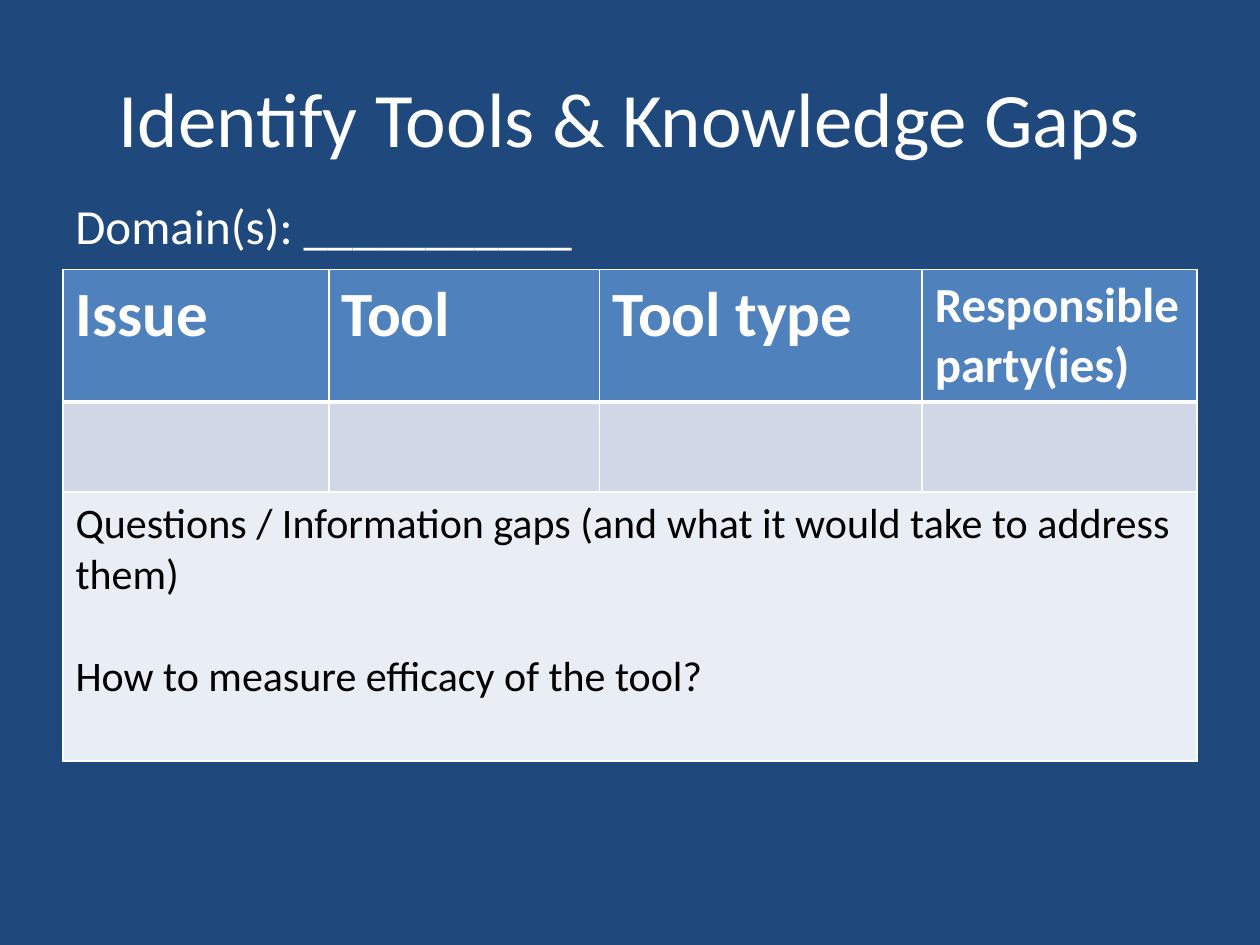
from dataclasses import dataclass

from lxml import etree
from pptx import Presentation
from pptx.dml.color import RGBColor
from pptx.enum import text
from pptx.oxml import ns
from pptx.util import Pt


@dataclass(frozen=True)
class Theme:
    font: str = "Calibri"
    back: str = "1F497D"
    white: str = "FFFFFF"
    black: str = "000000"
    head: str = "4F81BD"
    band: str = "D0D8E8"
    pale: str = "E9EDF4"
    title: int = 44
    large: int = 36
    label: int = 28
    body: int = 24


@dataclass(frozen=True)
class Label:
    words: str
    box: tuple[float, float, float, float]
    size: int
    align: text.PP_ALIGN
    anchor: text.MSO_ANCHOR
    wrap: bool = True


@dataclass(frozen=True)
class Head:
    words: str
    width: float
    size: int


T = Theme()
LABELS = [
    Label("Identify Tools & Knowledge Gaps", (36, 21.6, 648, 90), T.title,
          text.PP_ALIGN.CENTER, text.MSO_ANCHOR.MIDDLE),
    Label("Domain(s): ___________", (36, 108, 301.7, 41), T.label,
          text.PP_ALIGN.LEFT, text.MSO_ANCHOR.TOP, wrap=False),
]
HEADS = [
    Head("Issue", 151.9, T.large),
    Head("Tool", 154.8, T.large),
    Head("Tool type", 184.3, T.large),
    Head("Responsible party(ies)", 157, T.label),
]
ROWS = [75.6, 51.4, 153.6]
FILLS = [T.head, T.band, T.pale]
NOTES = [
    "Questions / Information gaps (and what it would take to address them)",
    "How to measure efficacy of the tool?",
]


def style(frame, size: int, color: str, bold: bool = False) -> None:
    for para in frame.paragraphs:
        for run in para.runs:
            run.font.name = T.font
            run.font.size = Pt(size)
            run.font.bold = bold
            run.font.color.rgb = RGBColor.from_string(color)


def add_label(slide, item: Label) -> None:
    frame = slide.shapes.add_textbox(*map(Pt, item.box)).text_frame
    frame.word_wrap = item.wrap
    frame.vertical_anchor = item.anchor
    frame.text = item.words
    frame.paragraphs[0].alignment = item.align
    style(frame, item.size, T.white)


def paint(cell, color: str, base: float, top: float) -> None:
    """Fill a cell and give it white borders."""
    props = cell._tc.get_or_add_tcPr()
    for side, width in (("L", 1), ("R", 1), ("T", top), ("B", base)):
        line = etree.SubElement(props, ns.qn(f"a:ln{side}"), w=str(Pt(width)))
        fill = etree.SubElement(line, ns.qn("a:solidFill"))
        etree.SubElement(fill, ns.qn("a:srgbClr"), val=T.white)
    cell.fill.solid()
    cell.fill.fore_color.rgb = RGBColor.from_string(color)


def add_grid(slide) -> None:
    wide = sum(head.width for head in HEADS)
    grid = slide.shapes.add_table(len(ROWS), len(HEADS), Pt(36), Pt(154.1),
                                  Pt(wide), Pt(sum(ROWS))).table
    grid.first_row = grid.horz_banding = False

    # Row heights, fills and borders, with a thick rule under the header
    for r, (high, color) in enumerate(zip(ROWS, FILLS)):
        grid.rows[r].height = Pt(high)
        for cell in grid.rows[r].cells:
            paint(cell, color, base=3 if r == 0 else 1, top=3 if r == 1 else 1)

    # Header
    for c, head in enumerate(HEADS):
        grid.columns[c].width = Pt(head.width)
        cell = grid.cell(0, c)
        cell.text_frame.text = head.words
        style(cell.text_frame, head.size, T.white, bold=True)

    # Questions across the full width
    cell = grid.cell(2, 0)
    cell.merge(grid.cell(2, len(HEADS) - 1))
    cell.text_frame.text = "\n".join(NOTES)
    cell.text_frame.paragraphs[1].space_before = Pt(29.3)
    style(cell.text_frame, T.body, T.black)


def main() -> None:
    deck = Presentation()
    deck.slide_width, deck.slide_height = Pt(720), Pt(540)
    slide = deck.slides.add_slide(deck.slide_layouts[6])
    slide.background.fill.solid()
    slide.background.fill.fore_color.rgb = RGBColor.from_string(T.back)

    add_grid(slide)
    for item in LABELS:
        add_label(slide, item)
    deck.save("out.pptx")


if __name__ == "__main__":
    main()
